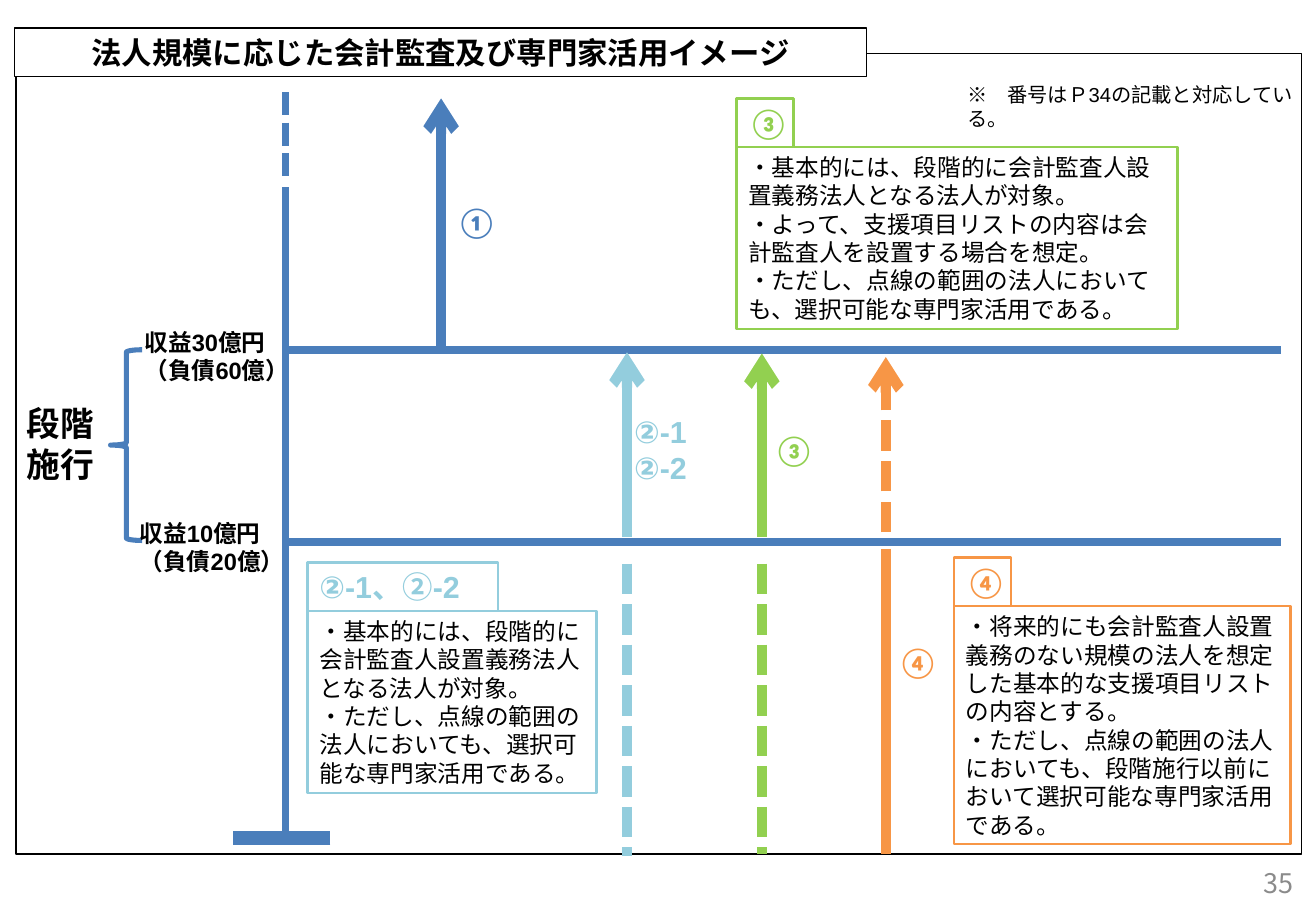
from dataclasses import dataclass

import pptx
import pptx.dml.color
import pptx.enum.dml
import pptx.enum.shapes
import pptx.enum.text
import pptx.oxml
import pptx.oxml.ns
import pptx.util

Inches = pptx.util.Inches
Pt = pptx.util.Pt
Align = pptx.enum.text.PP_ALIGN
Anchor = pptx.enum.text.MSO_ANCHOR
Preset = pptx.enum.shapes.MSO_SHAPE

BLACK, WHITE, GREY = "000000", "FFFFFF", "8B8B8B"
BLUE, SKY, GREEN, ORANGE = "4A7EBB", "93CDDD", "92D050", "F79646"

AXIS_X, RIGHT_X = 2.35, 10.54
UPPER_Y, LOWER_Y, BASE_Y, FRAME_BOTTOM = 2.88, 4.46, 6.9, 7.03


@dataclass
class Stroke:
    start: tuple[float, float]
    end: tuple[float, float]
    colour: str
    width: float = 6
    dashed: bool = False
    arrow: bool = False


@dataclass
class Label:
    lines: list[str]
    area: tuple[float, float, float, float]
    size: float
    colour: str = BLACK
    font: str = "Arial"
    bold: bool = True
    align: Align = Align.LEFT
    anchor: Anchor = Anchor.TOP


@dataclass
class Panel:
    heading: str
    heading_font: str
    heading_width: float
    lines: list[str]
    area: tuple[float, float, float, float]
    colour: str


STROKES = [
    Stroke((AXIS_X, 1.54), (AXIS_X, BASE_Y), BLUE, 4.5),
    Stroke((AXIS_X, 0.76), (AXIS_X, 1.46), BLUE, 4.5, dashed=True),
    Stroke((RIGHT_X, UPPER_Y), (AXIS_X, UPPER_Y), BLUE, 4.5),
    Stroke((RIGHT_X, LOWER_Y), (AXIS_X, LOWER_Y), BLUE, 4.5),
    Stroke((2.72, BASE_Y), (1.92, BASE_Y), BLUE, 8),
    Stroke((3.63, UPPER_Y), (3.63, 0.81), BLUE, arrow=True),
    Stroke((5.16, 4.42), (5.16, 2.9), SKY, arrow=True),
    Stroke((5.16, 4.64), (5.16, 7.05), SKY, dashed=True),
    Stroke((6.27, 4.42), (6.27, 2.91), GREEN, arrow=True),
    Stroke((6.27, 4.64), (6.27, FRAME_BOTTOM), GREEN, dashed=True),
    Stroke((7.29, 4.38), (7.29, 2.94), ORANGE, dashed=True, arrow=True),
    Stroke((7.29, 4.52), (7.29, FRAME_BOTTOM), ORANGE),
]

LABELS = [
    Label(["収益30億円", "（負債60億）"], (1.09, 2.65, 1.49, 0.56), 14),
    Label(["収益10億円", "（負債20億）"], (1.05, 4.22, 1.49, 0.56), 14),
    Label(["段階", "施行"], (-0.04, 3.27, 1.08, 0.77), 20, align=Align.CENTER),
    Label(["①"], (3.66, 1.62, 0.43, 0.4), 18, BLUE, "Calibri"),
    Label(["②-1", "②-2"], (5.12, 3.35, 0.81, 0.7), 18, SKY),
    Label(["③"], (6.27, 3.5, 0.43, 0.4), 18, GREEN, "Calibri"),
    Label(["④"], (7.29, 5.25, 0.43, 0.4), 18, ORANGE, "Calibri"),
    Label(["※　番号はＰ34の記載と対応している。"], (7.86, 0.63, 2.91, 0.5), 12, bold=False),
    Label(["35"], (9.67, 7.08, 1.07, 0.37), 16, GREY, "Noto Sans CJK JP", False,
          Align.RIGHT, Anchor.MIDDLE),
]

TARGET = "・基本的には、段階的に会計監査人設置義務法人となる法人が対象。"
OPTIONAL = "・ただし、点線の範囲の法人においても、選択可能な専門家活用である。"
HEADING_HEIGHT = 0.4

PANELS = [
    Panel("②-1、②-2", "Arial", 1.57, [TARGET, OPTIONAL], (2.53, 5.03, 2.38, 1.5), SKY),
    Panel("③", "Calibri", 0.47,
          [TARGET, "・よって、支援項目リストの内容は会計監査人を設置する場合を想定。", OPTIONAL],
          (6.06, 1.21, 3.63, 1.5), GREEN),
    Panel("④", "Calibri", 0.47,
          ["・将来的にも会計監査人設置義務のない規模の法人を想定した基本的な支援項目リストの内容とする。",
           "・ただし、点線の範囲の法人においても、段階施行以前において選択可能な専門家活用である。"],
          (7.85, 4.99, 2.77, 1.96), ORANGE),
]


def rgb(colour: str) -> pptx.dml.color.RGBColor:
    return pptx.dml.color.RGBColor.from_string(colour)


def write(box, lines: list[str], *, size: float, colour: str = BLACK, font: str = "Arial",
          bold: bool = False, align: Align = Align.LEFT, anchor: Anchor = Anchor.TOP) -> None:
    frame = box.text_frame
    frame.word_wrap = True
    frame.auto_size = pptx.enum.text.MSO_AUTO_SIZE.NONE
    frame.vertical_anchor = anchor
    frame.text = "\n".join(lines)
    for para in frame.paragraphs:
        para.alignment = align
        for span in para.runs:
            span.font.size = Pt(size)
            span.font.name = font
            span.font.bold = bold
            span.font.color.rgb = rgb(colour)


def outline(box, colour: str, width: float) -> None:
    box.line.color.rgb = rgb(colour)
    box.line.width = Pt(width)


def add_outlined(page, preset: Preset, area: tuple[float, float, float, float],
                 colour: str, width: float):
    box = page.shapes.add_shape(preset, *map(Inches, area))
    box.shadow.inherit = False
    box.fill.background()
    outline(box, colour, width)
    return box


def add_stroke(page, stroke: Stroke) -> None:
    line = page.shapes.add_connector(
        pptx.enum.shapes.MSO_CONNECTOR.STRAIGHT, *map(Inches, stroke.start + stroke.end))
    outline(line, stroke.colour, stroke.width)
    if stroke.dashed:
        line.line.dash_style = pptx.enum.dml.MSO_LINE.SQUARE_DOT
    if stroke.arrow:
        head = pptx.oxml.parse_xml(f'<a:tailEnd {pptx.oxml.ns.nsdecls("a")} type="arrow"/>')
        line.line._get_or_add_ln().append(head)
    line._element.spPr.append(
        pptx.oxml.parse_xml(f'<a:effectLst {pptx.oxml.ns.nsdecls("a")}/>'))


def add_label(page, label: Label) -> None:
    box = page.shapes.add_textbox(*map(Inches, label.area))
    write(box, label.lines, size=label.size, colour=label.colour, font=label.font,
          bold=label.bold, align=label.align, anchor=label.anchor)


def add_panel(page, panel: Panel) -> None:
    left, top, _, _ = panel.area
    body = add_outlined(page, Preset.RECTANGLE, panel.area, panel.colour, 1.5)
    write(body, panel.lines, size=14, font="Calibri")
    heading_area = (left, top - HEADING_HEIGHT, panel.heading_width, HEADING_HEIGHT)
    heading = add_outlined(page, Preset.RECTANGLE, heading_area, panel.colour, 1.5)
    write(heading, [panel.heading], size=18, colour=panel.colour,
          font=panel.heading_font, bold=True)


def add_title(page) -> None:
    title = page.shapes.title
    title.left, title.top, title.width, title.height = map(Inches, (0.12, 0.23, 7.01, 0.4))
    title.fill.solid()
    title.fill.fore_color.rgb = rgb(WHITE)
    outline(title, BLACK, 1)
    write(title, ["法人規模に応じた会計監査及び専門家活用イメージ"], size=18, bold=True,
          align=Align.CENTER, anchor=Anchor.MIDDLE)


def main() -> None:
    deck = pptx.Presentation()
    deck.slide_width, deck.slide_height = Inches(10.83), Inches(7.5)
    page = deck.slides.add_slide(deck.slide_layouts[5])
    border = add_outlined(page, Preset.RECTANGLE, (0.13, 0.44, 10.58, 6.59), BLACK, 1)
    add_title(page)
    page.shapes.title._element.addprevious(border._element)
    for stroke in STROKES:
        add_stroke(page, stroke)
    brace = add_outlined(page, Preset.LEFT_BRACE, (0.91, UPPER_Y, 0.26, 1.57), BLUE, 3)
    brace.adjustments[0] = 0.08
    for label in LABELS:
        add_label(page, label)
    for panel in PANELS:
        add_panel(page, panel)
    deck.save("out.pptx")


if __name__ == "__main__":
    main()
